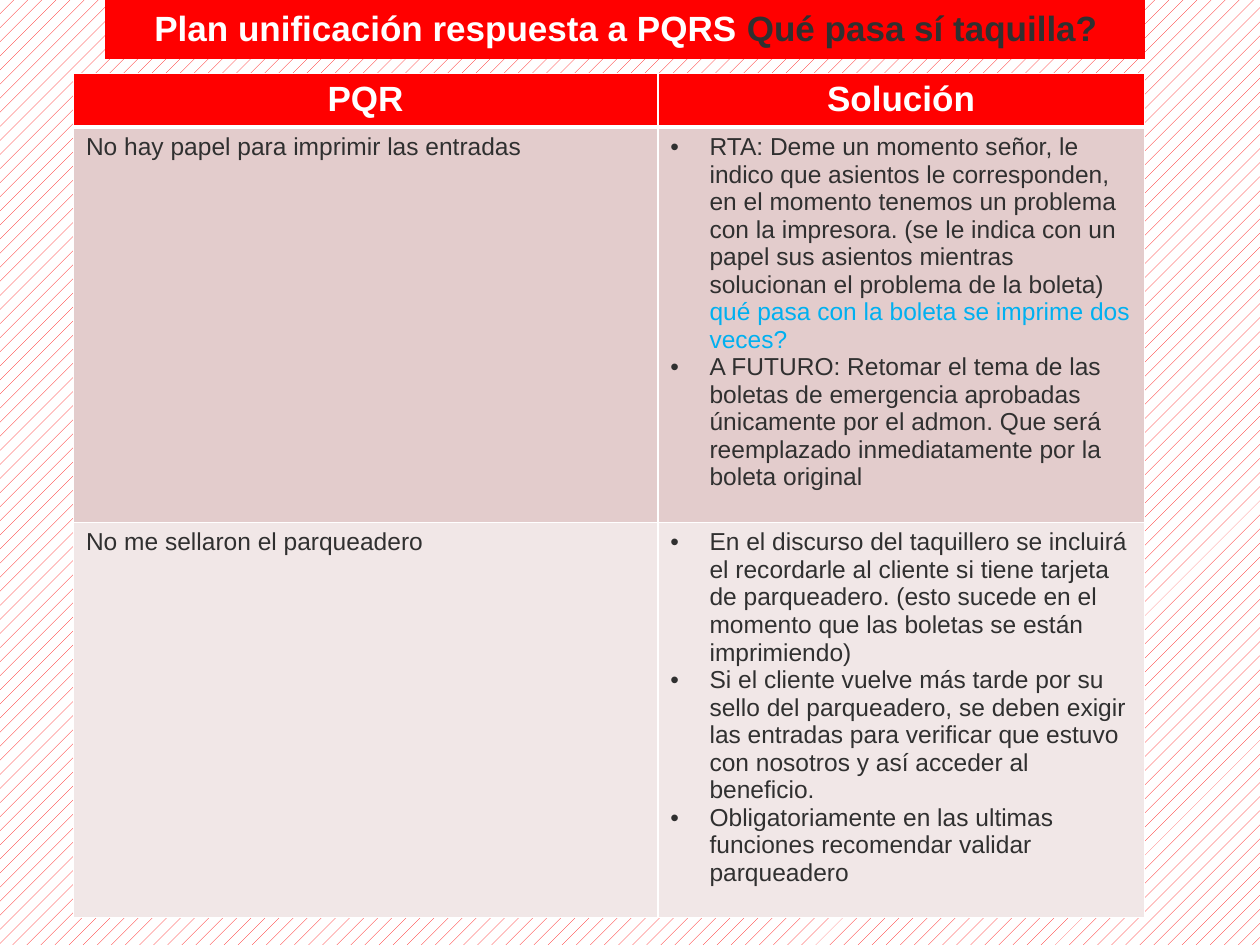
from dataclasses import dataclass

from lxml import etree
from pptx import Presentation
from pptx import util as u
from pptx.dml.color import RGBColor
from pptx.enum import dml, shapes, text
from pptx.oxml import ns


@dataclass(frozen=True)
class Theme:
    font: str = "Arial"
    red: str = "FF0000"
    white: str = "FFFFFF"
    ink: str = "303030"
    blue: str = "00B0F0"
    bands: tuple = ("E3CCCC", "F1E7E7")
    heading: int = 20
    body: int = 14


theme = Theme()


def write(frame, paragraphs, size=theme.body, bold=False, align=None, bullet=False):
    """Fill a frame; each paragraph is a list of (wording, colour) pairs."""
    for index, parts in enumerate(paragraphs):
        para = frame.paragraphs[0] if index == 0 else frame.add_paragraph()
        para.alignment = align
        if bullet:
            props = para._p.get_or_add_pPr()
            indent = u.Cm(0.79)
            props.set("marL", str(indent))
            props.set("indent", str(-indent))
            etree.SubElement(props, ns.qn("a:buFont"), typeface=theme.font)
            etree.SubElement(props, ns.qn("a:buChar"), char="•")
        for wording, colour in parts:
            span = para.add_run()
            span.text = wording
            span.font.name = theme.font
            span.font.size = u.Pt(size)
            span.font.bold = bold
            span.font.color.rgb = RGBColor.from_string(colour)


def add_borders(cell, **widths):
    """Draw white cell borders; widths in points are keyed by side: L, R, T, B."""
    props = cell._tc.get_or_add_tcPr()
    for side in "LRTB":
        line = etree.SubElement(props, ns.qn(f"a:ln{side}"), w=str(u.Pt(widths.get(side, 1))))
        fill = etree.SubElement(line, ns.qn("a:solidFill"))
        etree.SubElement(fill, ns.qn("a:srgbClr"), val=theme.white)


deck = Presentation()
deck.slide_width, deck.slide_height = u.Cm(25.4), u.Cm(19.05)
page = deck.slides.add_slide(deck.slide_layouts[5])

# Background and the two bands, all in red and white
top_band, bottom_band = [
    page.shapes.add_shape(shapes.MSO_SHAPE.RECTANGLE, u.Cm(2.12), u.Cm(top), u.Cm(20.96), u.Cm(height))
    for top, height in ((0, 1.19), (17.78, 0.08))
]
for band in (top_band, bottom_band):
    band.shadow.inherit = False
    band.line.fill.background()
top_band.fill.solid()
top_band.fill.fore_color.rgb = RGBColor.from_string(theme.red)
for fill, pattern in (
    (page.background.fill, dml.MSO_PATTERN.PERCENT_10),
    (bottom_band.fill, dml.MSO_PATTERN.PERCENT_75),
):
    fill.patterned()
    fill.pattern = pattern
    fill.fore_color.rgb = RGBColor.from_string(theme.red)
    fill.back_color.rgb = RGBColor.from_string(theme.white)

# Title, in front of the top band
title = page.shapes.title
page.shapes._spTree.append(title._element)
title.left, title.top, title.width, title.height = u.Cm(2.12), u.Cm(0), u.Cm(21), u.Cm(1.95)
title.text_frame.auto_size = text.MSO_AUTO_SIZE.NONE
title.text_frame.vertical_anchor = text.MSO_ANCHOR.TOP
title.text_frame.word_wrap = True
write(
    title.text_frame,
    [[("Plan unificación respuesta a PQRS ", theme.white), ("Qué pasa sí taquilla?", theme.ink)]],
    size=theme.heading, bold=True, align=text.PP_ALIGN.CENTER,
)

# Table wording: each complaint with its list of answers
headings = ("PQR", "Solución")
complaints = [
    ("No hay papel para imprimir las entradas", [
        [("RTA: Deme un momento señor, le indico que asientos le corresponden, en el momento "
          "tenemos un problema con la impresora. (se le indica con un papel sus asientos "
          "mientras solucionan el problema de la boleta) ", theme.ink),
         ("qué pasa con la boleta se imprime dos veces?", theme.blue)],
        [("A FUTURO: Retomar el tema de las boletas de emergencia aprobadas únicamente por el "
          "admon. Que será reemplazado inmediatamente por la boleta original", theme.ink)],
    ]),
    ("No me sellaron el parqueadero", [
        [("En el discurso del taquillero se incluirá el recordarle al cliente si tiene tarjeta "
          "de parqueadero. (esto sucede en el momento que las boletas se están imprimiendo)", theme.ink)],
        [("Si el cliente vuelve más tarde por su sello del parqueadero, se deben exigir las "
          "entradas para verificar que estuvo con nosotros y así acceder al beneficio.", theme.ink)],
        [("Obligatoriamente en las ultimas funciones recomendar validar parqueadero", theme.ink)],
    ]),
]

# Table grid
table = page.shapes.add_table(3, 2, u.Cm(1.48), u.Cm(1.48), u.Cm(21.59), u.Cm(17.02)).table
for column, width in zip(table.columns, (11.78, 9.81)):
    column.width = u.Cm(width)
for row, height in zip(table.rows, (1.08, 7.97, 7.97)):
    row.height = u.Cm(height)
for row, colour in enumerate((theme.red, *theme.bands)):
    for column in range(2):
        cell = table.cell(row, column)
        add_borders(cell, T=3 if row == 1 else 1, B=3 if row == 0 else 1)
        cell.fill.solid()
        cell.fill.fore_color.rgb = RGBColor.from_string(colour)

# Table text
for column, heading in enumerate(headings):
    write(table.cell(0, column).text_frame, [[(heading, theme.white)]],
          size=theme.heading, bold=True, align=text.PP_ALIGN.CENTER)
for row, (complaint, answers) in enumerate(complaints, start=1):
    write(table.cell(row, 0).text_frame, [[(complaint, theme.ink)]])
    write(table.cell(row, 1).text_frame, answers, bullet=True)

deck.save("out.pptx")
